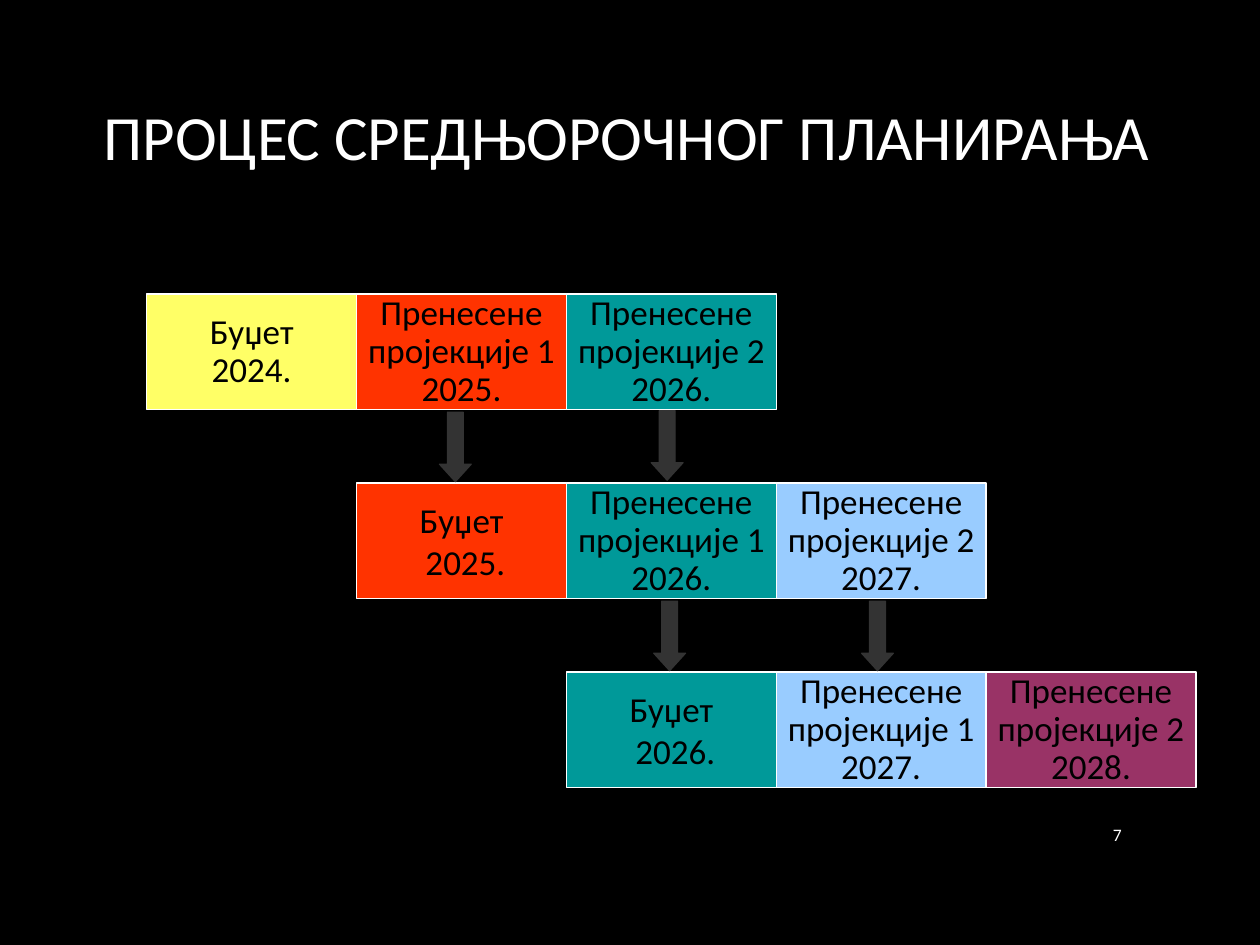
import pptx
import pptx.util
import pptx.dml.color
import pptx.enum.shapes
import pptx.enum.text

Cm = pptx.util.Cm
Pt = pptx.util.Pt
RGB = pptx.dml.color.RGBColor
KIND = pptx.enum.shapes.MSO_SHAPE
ALIGN = pptx.enum.text.PP_ALIGN
MIDDLE = pptx.enum.text.MSO_ANCHOR.MIDDLE

BLACK = RGB(0x00, 0x00, 0x00)
WHITE = RGB(0xFF, 0xFF, 0xFF)
GRAY = RGB(0x33, 0x33, 0x33)
YELLOW = RGB(0xFF, 0xFF, 0x66)
RED = RGB(0xFF, 0x33, 0x00)
TEAL = RGB(0x00, 0x99, 0x99)
BLUE = RGB(0x99, 0xCC, 0xFF)
PLUM = RGB(0x99, 0x33, 0x66)


def write(frame, lines, size, color, align, space=None):
    frame.word_wrap = True
    frame.vertical_anchor = MIDDLE
    for i, line in enumerate(lines):
        para = frame.add_paragraph() if i else frame.paragraphs[0]
        para.alignment = align
        para.line_spacing = space
        run = para.add_run()
        run.text = line
        run.font.name = "Calibri"
        run.font.size = Pt(size)
        run.font.color.rgb = color


def draw(shapes, kind, box, fill, line):
    shape = shapes.add_shape(kind, *[Cm(v) for v in box])
    shape.shadow.inherit = False
    shape.fill.solid()
    shape.fill.fore_color.rgb = fill
    shape.line.color.rgb = line
    shape.line.width = Pt(0.75)
    return shape


deck = pptx.Presentation()
deck.slide_width = Cm(25.4)
deck.slide_height = Cm(19.05)
slide = deck.slides.add_slide(deck.slide_layouts[5])
slide.background.fill.solid()
slide.background.fill.fore_color.rgb = BLACK

# Title
title = slide.shapes.title
title.left, title.top = Cm(1.27), Cm(1.27)
title.width, title.height = Cm(22.73), Cm(2.92)
write(title.text_frame, ["ПРОЦЕС СРЕДЊОРОЧНОГ ПЛАНИРАЊА"], 36, WHITE, ALIGN.CENTER)

# Page number
page = slide.shapes.add_textbox(Cm(21.69), Cm(16.31), Cm(1.17), Cm(1.04))
write(page.text_frame, ["7"], 10, WHITE, ALIGN.RIGHT)

# Budget cycles: each row starts one year, and one column, later
LEFT, TOP, WIDE, HIGH, STEP = 2.96, 5.93, 4.23, 2.33, 3.81
FILLS = [YELLOW, RED, TEAL, BLUE, PLUM]
for row in range(3):
    group = slide.shapes.add_group_shape()
    for ahead in range(3):
        col = row + ahead
        year = f"{2024 + col}."
        space = 0.9
        if ahead:
            lines = [f"Пренесене пројекције {ahead} {year}"]
        elif row:
            lines = ["Буџет", " " + year]
            space = None
        else:
            lines = ["Буџет", year]
        box = (LEFT + col * WIDE, TOP + row * STEP, WIDE, HIGH)
        cell = draw(group.shapes, KIND.RECTANGLE, box, FILLS[col], WHITE)
        frame = cell.text_frame
        frame.margin_left = frame.margin_right = Cm(0.1)
        frame.margin_top = frame.margin_bottom = Cm(0.1)
        write(frame, lines, 20, BLACK, ALIGN.CENTER, space)

# Arrows from each projection to the next cycle
for x, y in [(8.86, 8.31), (13.13, 8.28), (13.18, 12.12), (17.37, 12.12)]:
    arrow = draw(slide.shapes, KIND.DOWN_ARROW, (x, y, 0.64, 1.4), GRAY, GRAY)
    arrow.adjustments[0] = 0.5
    arrow.adjustments[1] = 0.55

deck.save("out.pptx")
